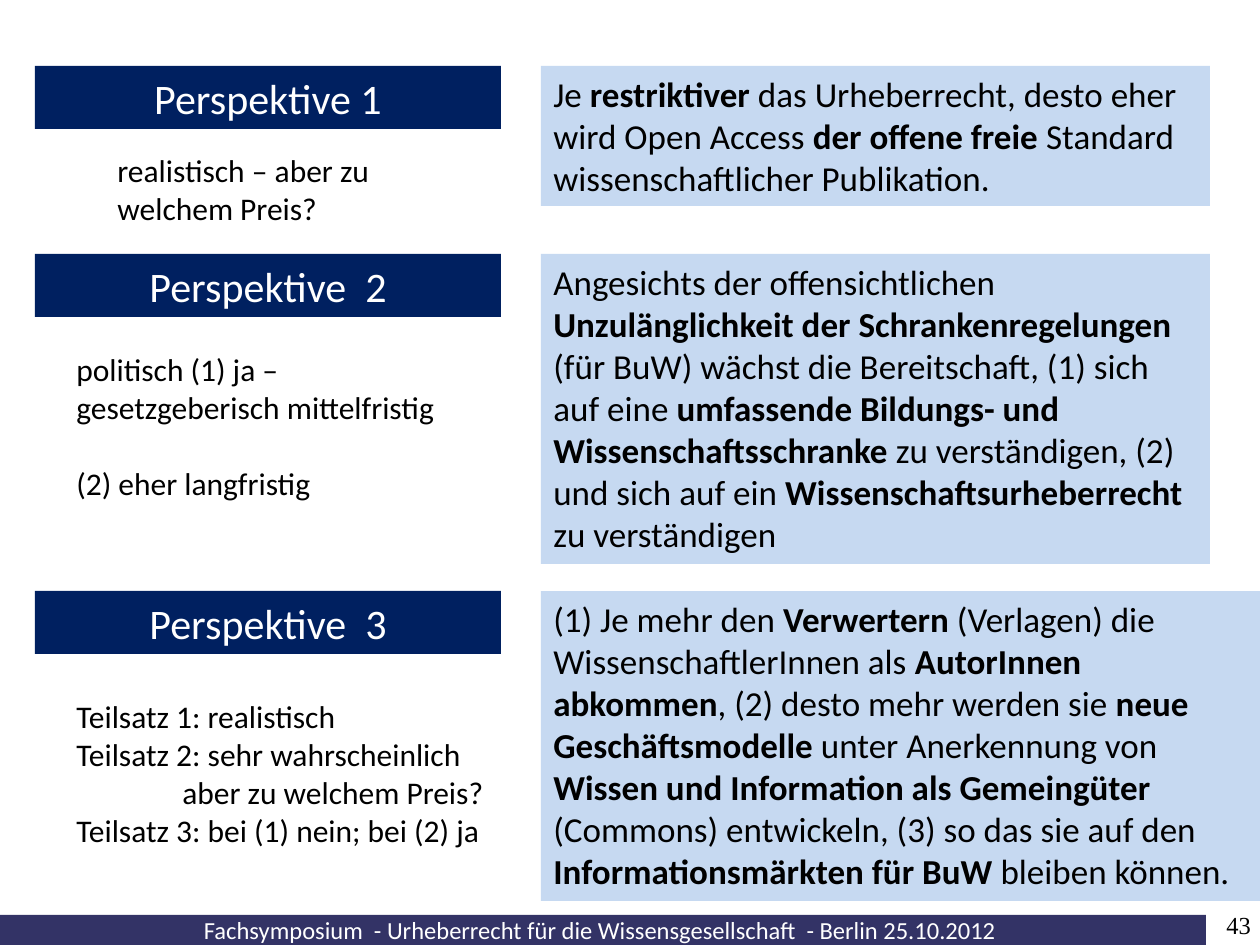
import pptx
import pptx.util
import pptx.dml.color
import pptx.enum.shapes
import pptx.enum.text

PX = 914400 // 126
ALIGN = pptx.enum.text.PP_ALIGN


def color(hex_string):
    return pptx.dml.color.RGBColor.from_string(hex_string)


def add_block(box, lines, size, ink, fill=None, align=ALIGN.LEFT, font="Calibri", inset=True):
    """Place text lines in a box; every second part between ** marks is bold."""
    place = [pptx.util.Emu(length * PX) for length in box]
    if fill:
        block = slide.shapes.add_shape(pptx.enum.shapes.MSO_SHAPE.RECTANGLE, *place)
        block.shadow.inherit = False
        block.fill.solid()
        block.fill.fore_color.rgb = color(fill)
        block.line.fill.background()
    else:
        block = slide.shapes.add_textbox(*place)
    frame = block.text_frame
    frame.word_wrap = True
    frame.vertical_anchor = pptx.enum.text.MSO_ANCHOR.TOP
    if not inset:
        frame.margin_left = frame.margin_right = frame.margin_top = frame.margin_bottom = 0
    for number, line in enumerate(lines):
        paragraph = frame.add_paragraph() if number else frame.paragraphs[0]
        paragraph.alignment = align
        paragraph.font.name = font
        paragraph.font.size = pptx.util.Pt(size)
        paragraph.font.color.rgb = color(ink)
        for part_number, part in enumerate(line.split("**")):
            if part:
                run = paragraph.add_run()
                run.text = part
                if part_number % 2:
                    run.font.bold = True
    return frame.paragraphs


deck = pptx.Presentation()
deck.slide_width = pptx.util.Emu(1260 * PX)
deck.slide_height = pptx.util.Emu(945 * PX)
slide = deck.slides.add_slide(deck.slide_layouts[6])

# Footer bar and slide number
add_block((0, 915, 1206, 30),
          ["Fachsymposium  - Urheberrecht für die Wissensgesellschaft  - Berlin 25.10.2012 "],
          14, "FFFFFF", "333366", ALIGN.CENTER, inset=False)
add_block((1166, 910, 85, 35), ["43"], 14, "000000", align=ALIGN.RIGHT,
          font="Times New Roman", inset=False)

# Perspectives: heading, top, thesis width and height, thesis, note box, note lines
perspectives = [
    ("Perspektive 1", 66, 669, 140,
     "Je **restriktiver** das Urheberrecht, desto eher wird Open Access "
     "**der offene freie **Standard wissenschaftlicher Publikation.",
     (105, 145, 287, 89), ["realistisch – aber zu welchem Preis?"]),
    ("Perspektive  2", 254, 669, 310,
     "Angesichts der offensichtlichen **Unzulänglichkeit der Schrankenregelungen **"
     "(für BuW) wächst die Bereitschaft, (1) sich auf eine **umfassende Bildungs- und "
     "Wissenschaftsschranke **zu verständigen, (2) und sich auf ein "
     "**Wissenschaftsurheberrecht** zu verständigen",
     (64, 344, 407, 165),
     ["politisch (1) ja – gesetzgeberisch mittelfristig", "(2) eher langfristig"]),
    ("Perspektive  3", 591, 719, 310,
     "(1) Je mehr den **Verwertern** (Verlagen) die WissenschaftlerInnen als "
     "**AutorInnen abkommen**, (2) desto mehr werden sie **neue Geschäftsmodelle** "
     "unter Anerkennung von **Wissen und Information als Gemeingüter **(Commons) "
     "entwickeln, (3) so das sie auf den **Informationsmärkten für BuW **bleiben können.",
     (64, 691, 436, 165),
     ["Teilsatz 1: realistisch", "Teilsatz 2: sehr wahrscheinlich",
      "aber zu welchem Preis?", "Teilsatz 3: bei (1) nein; bei (2) ja"]),
]
notes = []
for heading, top, width, height, thesis, note_box, note_lines in perspectives:
    add_block((541, top, width, height), [thesis], 20, "000000", "C6D9F1")
    add_block((35, top, 466, 63), [heading], 24, "FFFFFF", "002060", ALIGN.CENTER)
    notes.append(add_block(note_box, note_lines, 18, "000000"))

# Gap before the second point, indent of the continued Teilsatz 2
notes[1][1].space_before = pptx.util.Pt(22)
notes[2][2]._p.get_or_add_pPr().set("marL", str(106 * PX))

deck.save("out.pptx")
